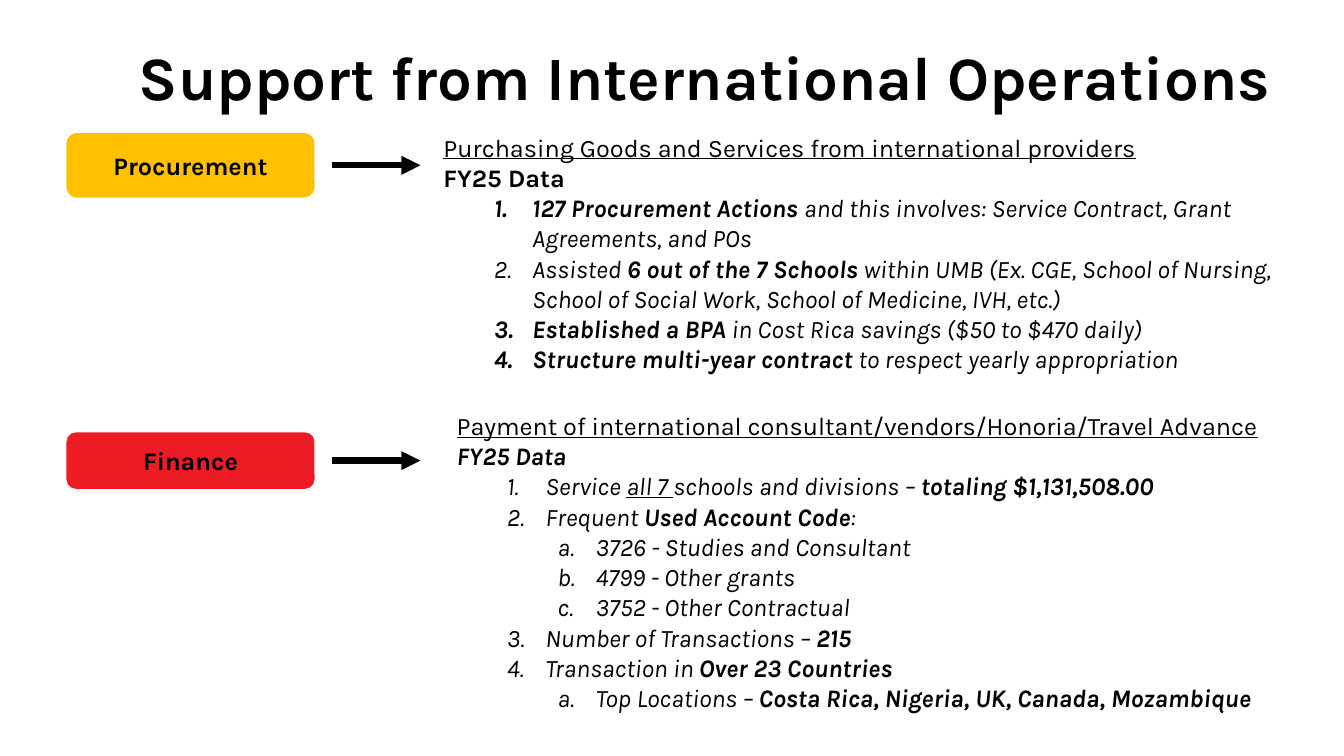
import pptx
import pptx.util
import pptx.dml.color
import pptx.enum.shapes
import pptx.enum.text
import pptx.oxml.ns
from lxml import etree

Inches = pptx.util.Inches
Pt = pptx.util.Pt
Align = pptx.enum.text.PP_ALIGN
Anchor = pptx.enum.text.MSO_ANCHOR

COLORS = {"ink": "000000", "gold": "FFC000", "red": "ED1B24"}
MARKS = {1: "arabicPeriod", 2: "alphaLcPeriod"}


def rgb(name):
    return pptx.dml.color.RGBColor.from_string(COLORS[name])


def sub(parent, tag, **attrs):
    return etree.SubElement(parent, pptx.oxml.ns.qn(tag), attrs)


def write(para, text, font="Karla", size=18, color="ink", style=""):
    """Add a run; style holds any of b (bold), i (italic), u (underline)."""
    run = para.add_run()
    run.text = text
    face = run.font
    face.name = font
    face.size = Pt(size)
    face.color.rgb = rgb(color)
    face.bold = "b" in style
    face.italic = "i" in style
    face.underline = "u" in style


class Page:
    def __init__(self, deck):
        self.slide = deck.slides.add_slide(deck.slide_layouts[6])
        self.shapes = self.slide.shapes

    def box(self, x, y, w, h, anchor=Anchor.TOP):
        frame = self.shapes.add_textbox(
            Inches(x), Inches(y), Inches(w), Inches(h)).text_frame
        frame.word_wrap = True
        frame.vertical_anchor = anchor
        return frame

    def title(self, text, x, y, w, h):
        para = self.box(x, y, w, h, Anchor.BOTTOM).paragraphs[0]
        para.line_spacing = 0.9
        write(para, text, size=44, style="b")

    def label(self, text, fill, x, y, w, h):
        kind = pptx.enum.shapes.MSO_SHAPE.ROUNDED_RECTANGLE
        shape = self.shapes.add_shape(
            kind, Inches(x), Inches(y), Inches(w), Inches(h))
        shape.shadow.inherit = False
        shape.fill.solid()
        shape.fill.fore_color.rgb = rgb(fill)
        shape.line.fill.background()
        shape.text_frame.vertical_anchor = Anchor.MIDDLE
        para = shape.text_frame.paragraphs[0]
        para.alignment = Align.CENTER
        write(para, text, style="b")

    def arrow(self, x1, x2, y):
        kind = pptx.enum.shapes.MSO_CONNECTOR.STRAIGHT
        link = self.shapes.add_connector(
            kind, Inches(x1), Inches(y), Inches(x2), Inches(y))
        link.line.color.rgb = rgb("ink")
        link.line.width = Pt(4.5)
        sub(link.line._get_or_add_ln(), "a:tailEnd", type="triangle")
        sub(link._element.spPr, "a:effectLst")

    def outline(self, rows, x, y, w, h):
        """Each row is a level (0 is plain) and its (text, style) runs."""
        frame = self.box(x, y, w, h)
        for n, (level, *runs) in enumerate(rows):
            para = frame.add_paragraph() if n else frame.paragraphs[0]
            if level:
                para.level = level
                props = para._p.get_or_add_pPr()
                props.set("marL", str(Inches(0.38 + 0.5 * level)))
                props.set("indent", str(Inches(-0.38)))
                sub(props, "a:buFont", typeface="Karla")
                sub(props, "a:buAutoNum", type=MARKS[level])
            for text, style in runs:
                write(para, text, style=style)


BUYING = [
    (0, ("Purchasing Goods and Services from international providers", "u")),
    (0, ("FY25 Data", "b")),
    (1, ("127 Procurement Actions ", "bi"),
     ("and this involves: Service Contract, Grant Agreements, and POs", "i")),
    (1, ("Assisted ", "i"), ("6 out of the 7 Schools ", "bi"),
     ("within UMB (Ex. CGE, School of Nursing, School of Social Work, "
      "School of Medicine, IVH, etc.)", "i")),
    (1, ("Established a BPA ", "bi"),
     ("in Cost Rica savings ($50 to $470 daily)", "i")),
    (1, ("Structure multi-year contract ", "bi"),
     ("to respect yearly appropriation", "i")),
]

PAYING = [
    (0, ("Payment of international consultant/vendors/Honoria/Travel Advance",
         "u")),
    (0, ("FY25 Data", "bi")),
    (1, ("Service ", "i"), ("all 7 ", "iu"),
     ("schools and divisions – ", "i"), ("totaling $1,131,508.00", "bi")),
    (1, ("Frequent ", "i"), ("Used Account Code", "bi"), (":", "i")),
    (2, ("3726 - Studies and Consultant", "i")),
    (2, ("4799 - Other grants", "i")),
    (2, ("3752 - Other Contractual", "i")),
    (1, ("Number of Transactions – ", "i"), ("215", "bi")),
    (1, ("Transaction in ", "i"), ("Over 23 Countries", "bi")),
    (2, ("Top Locations – ", "i"),
     ("Costa Rica, Nigeria, UK, Canada, Mozambique", "bi")),
]


def main():
    deck = pptx.Presentation()
    deck.slide_width = Inches(13.33)
    deck.slide_height = Inches(7.5)
    page = Page(deck)

    # Heading
    page.title("Support from International Operations", 1.28, 0.47, 12.03, 0.71)

    # Procurement
    page.label("Procurement", "gold", 0.66, 1.32, 2.46, 0.64)
    page.arrow(3.29, 4.17, 1.64)
    page.outline(BUYING, 4.3, 1.26, 8.88, 2.52)

    # Finance
    page.label("Finance", "red", 0.66, 4.29, 2.46, 0.56)
    page.arrow(3.29, 4.17, 4.57)
    page.outline(PAYING, 4.43, 4.02, 8.88, 3.13)

    deck.save("out.pptx")


if __name__ == "__main__":
    main()
